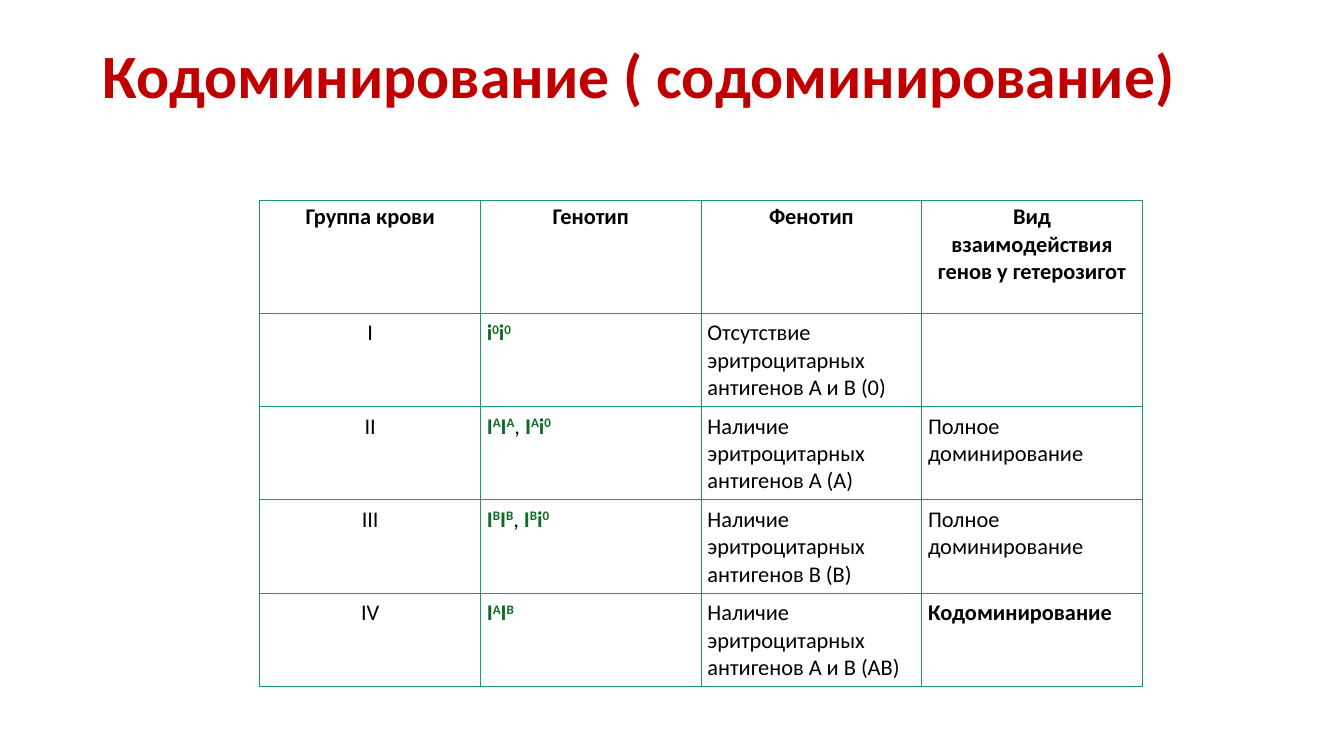
from lxml.etree import SubElement
from pptx import Presentation
from pptx.dml.color import RGBColor as Rgb
from pptx.enum.text import MSO_ANCHOR as Anchor, PP_ALIGN as Align
from pptx.oxml.ns import qn
from pptx.util import Cm, Pt

COLORS = {"title": "C00000", "text": "000000", "allele": "0B6C24", "grid": "1E9669"}

HEADINGS = ["Группа крови", "Генотип", "Фенотип", "Вид взаимодействия генов у гетерозигот"]
BLOOD_GROUPS = [
    ("I", ["i0i0"], "Отсутствие эритроцитарных антигенов А и В (0)", ""),
    ("II", ["IAIA", "IAi0"], "Наличие эритроцитарных антигенов А (А)", "Полное доминирование"),
    ("III", ["IBIB", "IBi0"], "Наличие эритроцитарных антигенов В (В)", "Полное доминирование"),
    ("IV", ["IAIB"], "Наличие эритроцитарных антигенов А и В (АВ)", "Кодоминирование"),
]


class GeneticsSlide:
    font_name = "Calibri"
    title_size = Pt(44)
    table_size = Pt(16)
    grid_width = Pt(0.75)

    def __init__(self, deck):
        self.slide = deck.slides.add_slide(deck.slide_layouts[6])

    def style(self, font, size, color, bold=False):
        font.name, font.size, font.bold = self.font_name, size, bold
        font.color.rgb = Rgb.from_string(COLORS[color])

    def title(self, text, left, top, width, height):
        frame = self.slide.shapes.add_textbox(Cm(left), Cm(top), Cm(width), Cm(height)).text_frame
        frame.word_wrap = True
        frame.vertical_anchor = Anchor.TOP
        heading = frame.paragraphs[0]
        heading.text = text
        heading.line_spacing = 0.9
        self.style(heading.font, self.title_size, "title", bold=True)

    def table(self, left, top, column_width, row_heights, columns):
        grid = self.slide.shapes.add_table(
            len(row_heights), columns, Cm(left), Cm(top),
            Cm(column_width * columns), Cm(sum(row_heights))).table
        grid.first_row = grid.horz_banding = False
        for column in grid.columns:
            column.width = Cm(column_width)
        for row, height in zip(grid.rows, row_heights):
            row.height = Cm(height)
        return grid

    def cell(self, cell, text="", bold=False, centered=False, margins=(0.16, 0.16)):
        cell.margin_left = cell.margin_right = Cm(margins[0])
        cell.margin_top = cell.margin_bottom = Cm(margins[1])
        self.borders(cell)
        cell.fill.background()
        entry = cell.text_frame.paragraphs[0]
        entry.text = text
        entry.alignment = Align.CENTER if centered else Align.LEFT
        self.style(entry.font, self.table_size, "text", bold)
        return entry

    def borders(self, cell):
        properties = cell._tc.get_or_add_tcPr()
        for side in ("lnL", "lnR", "lnT", "lnB"):
            line = SubElement(properties, qn(f"a:{side}"), w=str(self.grid_width))
            fill = SubElement(line, qn("a:solidFill"))
            SubElement(fill, qn("a:srgbClr"), val=COLORS["grid"])

    def genotypes(self, entry, variants):
        for number, variant in enumerate(variants):
            if number:
                separator = entry.add_run()
                separator.text = ", "
            for position, symbol in enumerate(variant):
                allele = entry.add_run()
                allele.text = symbol
                self.style(allele.font, self.table_size, "allele", bold=True)
                if position % 2:
                    allele._r.get_or_add_rPr().set("baseline", "30000")


def main():
    deck = Presentation()
    deck.slide_width, deck.slide_height = Cm(33.87), Cm(19.05)
    page = GeneticsSlide(deck)
    page.title("Кодоминирование ( содоминирование)", 2.33, 1.02, 29.21, 3.68)

    row_heights = [2.84] + [2.31] * len(BLOOD_GROUPS)
    grid = page.table(6.55, 5.05, 5.56, row_heights, len(HEADINGS))
    for column, heading in enumerate(HEADINGS):
        page.cell(grid.cell(0, column), heading, bold=True, centered=True, margins=(0.23, 0.08))
    for row, (group, variants, phenotype, interaction) in enumerate(BLOOD_GROUPS, 1):
        page.cell(grid.cell(row, 0), group, centered=True)
        page.genotypes(page.cell(grid.cell(row, 1)), variants)
        page.cell(grid.cell(row, 2), phenotype)
        page.cell(grid.cell(row, 3), interaction, bold=interaction == "Кодоминирование")
    deck.save("out.pptx")


if __name__ == "__main__":
    main()
